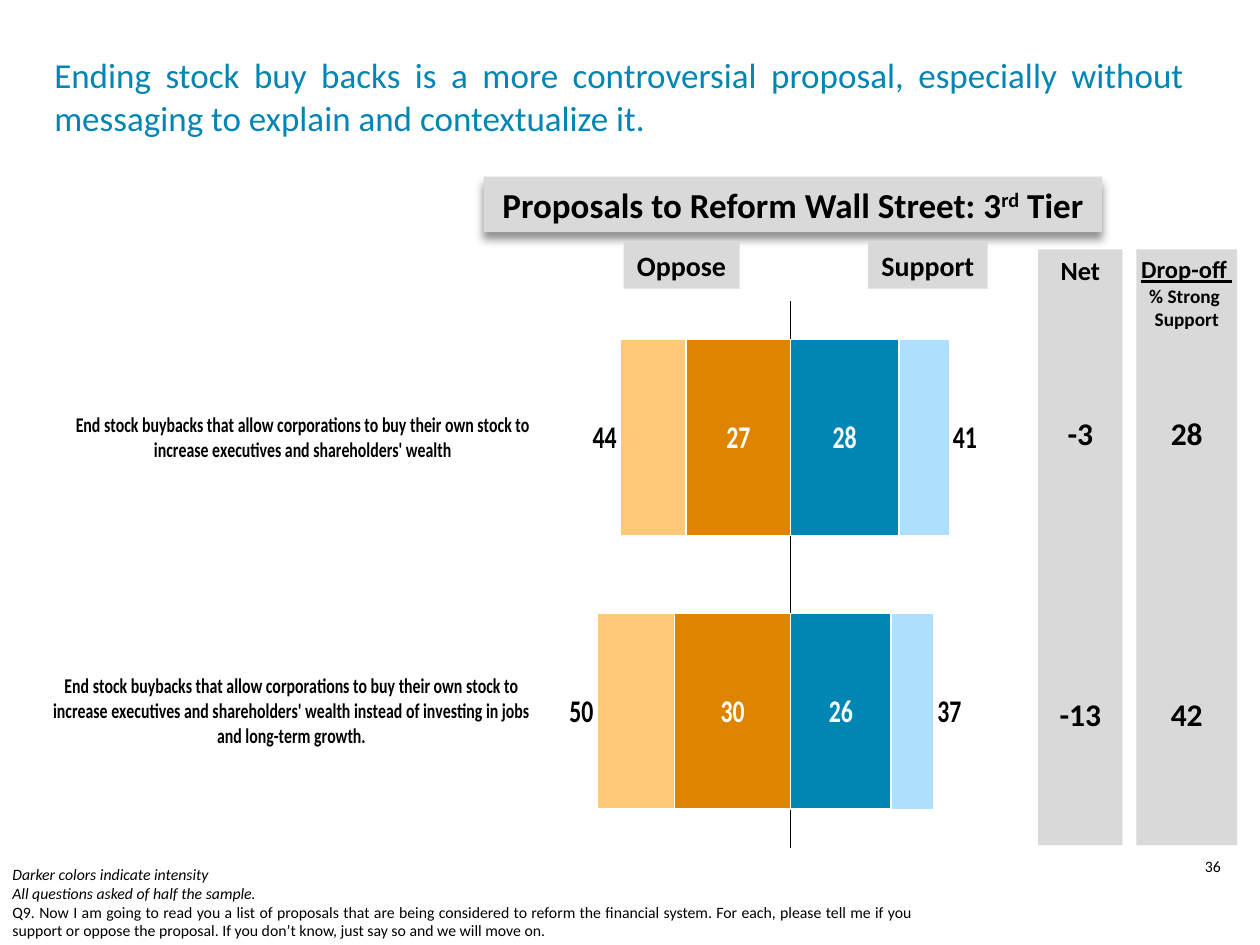
from copy import deepcopy
from pptx import Presentation
from pptx import util as u
from pptx.chart import data as chart_data
from pptx.dml import color
from pptx.enum import chart as ch
from pptx.enum import shapes, text
from pptx.oxml import parse_xml
from pptx.oxml.ns import nsdecls, qn

FONT = "Calibri"
BLACK, WHITE, GREY, BLUE = "000000", "FFFFFF", "D9D9D9", "0085B4"
CENTER, JUSTIFY = text.PP_ALIGN.CENTER, text.PP_ALIGN.JUSTIFY
CATEGORIES = [
    "End stock buybacks that allow corporations to buy their own stock to "
    "increase executives and shareholders' wealth",
    "End stock buybacks that allow corporations to buy their own stock to "
    "increase executives and shareholders' wealth instead of investing in jobs "
    "and long-term growth.",
]
OUTSIDE, MIDDLE = ch.XL_LABEL_POSITION.OUTSIDE_END, ch.XL_LABEL_POSITION.CENTER
SERIES = [
    ("Total support", (41, 37), "AFDFFF", 0.25, OUTSIDE, BLACK),
    ("Total oppose", (-44, -50), "FFC979", 1.05, OUTSIDE, BLACK),
    ("Strong support", (28, 26), BLUE, 1.05, MIDDLE, WHITE),
    ("Strong oppose", (-27, -30), "DE8400", 1.05, MIDDLE, WHITE),
]


def rgb(value):
    return color.RGBColor.from_string(value)


def lengths(box):
    return [u.Cm(value) for value in box]


def style(font, size, colour=BLACK, bold=False):
    font.name, font.size, font.bold = FONT, u.Pt(size), bold
    font.color.rgb = rgb(colour)


def add_run(paragraph, words, size, colour=BLACK, bold=False, italic=False, underline=False):
    run = paragraph.add_run()
    run.text = words
    style(run.font, size, colour, bold)
    run.font.italic, run.font.underline = italic, underline
    return run


def add_text(slide, box, lines, align=CENTER, inset=None):
    shape = slide.shapes.add_textbox(*lengths(box))
    frame = shape.text_frame
    frame.word_wrap = True
    if inset is not None:
        frame.margin_left = frame.margin_right = u.Cm(inset)
        frame.margin_top = frame.margin_bottom = u.Cm(inset)
    for index, (words, options) in enumerate(lines):
        paragraph = frame.add_paragraph() if index else frame.paragraphs[0]
        paragraph.alignment = align
        add_run(paragraph, words, **options)


def add_panel(slide, box):
    shape = slide.shapes.add_shape(shapes.MSO_SHAPE.RECTANGLE, *lengths(box))
    shape.shadow.inherit = False
    shape.fill.solid()
    shape.fill.fore_color.rgb = rgb(GREY)
    shape.line.fill.background()
    frame = shape.text_frame
    frame.vertical_anchor = text.MSO_ANCHOR.MIDDLE
    frame.word_wrap = False
    frame.paragraphs[0].alignment = CENTER
    return shape


def add_title(slide, box, words):
    title = slide.shapes.title
    title.left, title.top, title.width, title.height = lengths(box)
    title.text_frame.vertical_anchor = text.MSO_ANCHOR.MIDDLE
    paragraph = title.text_frame.paragraphs[0]
    paragraph.alignment = JUSTIFY
    add_run(paragraph, words, 20, BLUE)


def add_headline(slide, box):
    shape = add_panel(slide, box)
    paragraph = shape.text_frame.paragraphs[0]
    add_run(paragraph, "Proposals to Reform Wall Street: 3", 20, bold=True)
    ordinal = add_run(paragraph, "rd", 20, bold=True)
    ordinal._r.get_or_add_rPr().set("baseline", "30000")
    add_run(paragraph, " Tier", 20, bold=True)
    effects = shape._element.spPr.find(qn("a:effectLst"))
    effects.append(parse_xml(
        f'<a:outerShdw {nsdecls("a")} blurRad="{u.Pt(5)}" dist="{u.Pt(4)}" dir="5400000" '
        'algn="t" rotWithShape="0"><a:srgbClr val="000000"><a:alpha val="43000"/>'
        '</a:srgbClr></a:outerShdw>'))


def add_side_label(slide, box, words):
    add_run(add_panel(slide, box).text_frame.paragraphs[0], words, 16, bold=True)


def add_score_column(slide, box, header, scores):
    left, top, width, _ = box
    add_panel(slide, box)
    add_text(slide, (left, top + 0.1, width, 1.55), header, inset=0)
    for offset, score in zip((3.32, 8.99), scores):
        add_text(slide, (left, top + offset, width, 0.76),
                 [(score, dict(size=18, bold=True))], inset=0)


def move_to_second_axes(chart, first_moved):
    area = chart._chartSpace.chart.plotArea
    bars = area.find(qn("c:barChart"))
    overlay = deepcopy(bars)
    for plot, keep_late in ((bars, False), (overlay, True)):
        for index, series in enumerate(plot.findall(qn("c:ser"))):
            if (index >= first_moved) != keep_late:
                plot.remove(series)
    bars.addnext(overlay)
    axes = [area.find(qn(tag)) for tag in ("c:catAx", "c:valAx")]
    ids = {axis.find(qn("c:axId")).get("val"): str(9001 + index)
           for index, axis in enumerate(axes)}
    copies = [deepcopy(axis) for axis in axes]
    for axis in copies:
        axis.find(qn("c:delete")).set("val", "1")
    axes[-1].addnext(copies[1])
    axes[-1].addnext(copies[0])
    for part in [overlay, *copies]:
        for tag in ("c:axId", "c:crossAx"):
            for node in part.findall(qn(tag)):
                node.set("val", ids[node.get("val")])


def add_bar_chart(slide, box):
    source = chart_data.CategoryChartData()
    source.categories = CATEGORIES
    for name, values, *_ in SERIES:
        source.add_series(name, values)
    chart = slide.shapes.add_chart(ch.XL_CHART_TYPE.BAR_CLUSTERED, *lengths(box), source).chart
    chart.has_legend = chart.has_title = False
    style(chart.font, 11)
    plot = chart.plots[0]
    plot.gap_width, plot.overlap, plot.vary_by_categories = 40, 100, False
    for series, (_, _, fill, weight, position, label_colour) in zip(plot.series, SERIES):
        series.invert_if_negative = False
        series.format.fill.solid()
        series.format.fill.fore_color.rgb = rgb(fill)
        series.format.line.color.rgb = rgb(WHITE)
        series.format.line.width = u.Pt(weight)
        labels = series.data_labels
        labels.show_value, labels.position = True, position
        labels.number_format, labels.number_format_is_linked = "#,##0_);#,##0", False
        if series.values[0] > 0:
            labels.number_format = "General"
        style(labels.font, 18, label_colour, True)

    categories, values = chart.category_axis, chart.value_axis
    categories.reverse_order = True
    categories.tick_label_position = ch.XL_TICK_LABEL_POSITION.LOW
    categories.major_tick_mark = ch.XL_TICK_MARK.NONE
    categories.format.line.color.rgb = rgb(BLACK)
    categories.format.line.width = u.Pt(0.25)
    style(categories.tick_labels.font, 12, bold=True)
    values.minimum_scale, values.maximum_scale = -65, 60
    values.has_major_gridlines = values.visible = False

    area = chart._chartSpace.chart.plotArea
    for layout in area.findall(qn("c:layout")):
        area.remove(layout)
    area.insert(0, parse_xml(
        f'<c:layout {nsdecls("c")}><c:manualLayout><c:layoutTarget val="inner"/>'
        '<c:xMode val="edge"/><c:yMode val="edge"/><c:x val="0.327"/><c:y val="0.125"/>'
        '<c:w val="0.65"/><c:h val="0.857"/></c:manualLayout></c:layout>'))
    move_to_second_axes(chart, 2)


def main():
    presentation = Presentation()
    presentation.slide_width, presentation.slide_height = u.Cm(25.4), u.Cm(19.05)
    slide = presentation.slides.add_slide(presentation.slide_layouts[5])
    add_title(slide, (0.84, 0.46, 23.29, 2.95),
              "Ending stock buy backs is a more controversial proposal, especially "
              "without messaging to explain and contextualize it.")
    add_text(slide, (23.5, 17.15, 1.9, 0.84), [("36", dict(size=9))])
    add_bar_chart(slide, (1.07, 4.45, 19.89, 12.88))
    add_headline(slide, (9.75, 3.56, 12.47, 1.12))
    add_score_column(slide, (22.91, 5.03, 2.03, 12.01), [
        ("Drop-off ", dict(size=14, bold=True, underline=True)),
        ("% Strong ", dict(size=11, bold=True)),
        ("Support", dict(size=11, bold=True)),
    ], ("28", "42"))
    add_score_column(slide, (20.93, 5.03, 1.7, 12.01),
                     [("Net", dict(size=15, bold=True))], ("-3", "-13"))
    add_side_label(slide, (12.57, 4.88, 2.34, 0.94), "Oppose")
    add_side_label(slide, (17.5, 4.88, 2.41, 0.94), "Support")
    add_text(slide, (0, 17.3, 18.62, 1.8), [
        ("Darker colors indicate intensity", dict(size=9, italic=True)),
        ("All questions asked of half the sample.", dict(size=9, italic=True)),
        ("Q9. Now I am going to read you a list of proposals that are being considered to "
         "reform the financial system. For each, please tell me if you support or oppose "
         "the proposal. If you don’t know, just say so and we will move on.", dict(size=9)),
    ], align=JUSTIFY)
    presentation.save("out.pptx")


if __name__ == "__main__":
    main()
